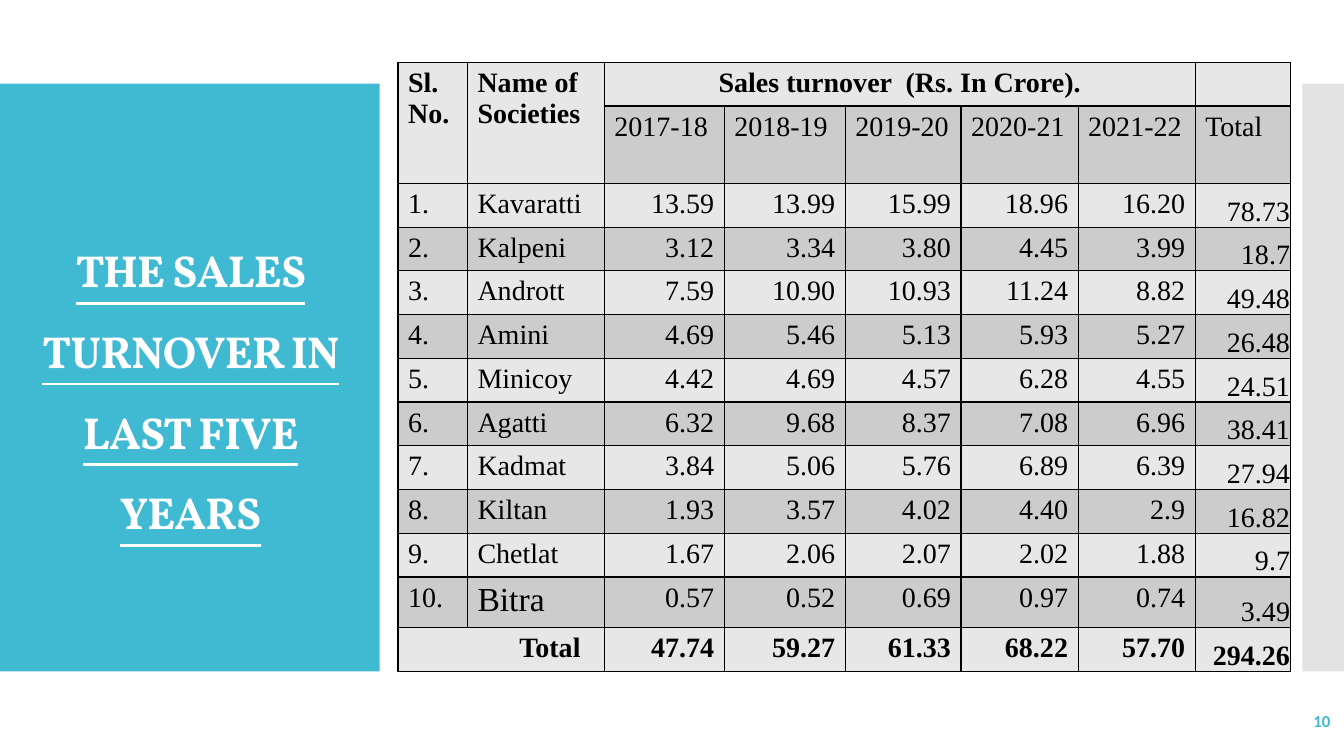
from dataclasses import dataclass

from lxml import etree
from pptx import Presentation
from pptx.dml.color import RGBColor
from pptx.enum.shapes import MSO_SHAPE
from pptx.enum.text import MSO_ANCHOR, MSO_AUTO_SIZE, PP_ALIGN
from pptx.oxml.ns import qn
from pptx.util import Cm, Pt

RECT = MSO_SHAPE.RECTANGLE
TOP, MIDDLE, BOTTOM = MSO_ANCHOR.TOP, MSO_ANCHOR.MIDDLE, MSO_ANCHOR.BOTTOM
LEFT, CENTER, RIGHT = PP_ALIGN.LEFT, PP_ALIGN.CENTER, PP_ALIGN.RIGHT
FIXED = MSO_AUTO_SIZE.NONE

TITLE = "THE SALES TURNOVER IN LAST FIVE YEARS"
PAGE = "10"
HEADS = [["Sl.", "No."], ["Name of Societies"], ["Sales turnover  (Rs. In Crore)."]]
YEARS = ["2017-18", "2018-19", "2019-20", "2020-21", "2021-22", "Total"]
SALES = [
    ("Kavaratti", "13.59", "13.99", "15.99", "18.96", "16.20", "78.73"),
    ("Kalpeni", "3.12", "3.34", "3.80", "4.45", "3.99", "18.7"),
    ("Andrott", "7.59", "10.90", "10.93", "11.24", "8.82", "49.48"),
    ("Amini", "4.69", "5.46", "5.13", "5.93", "5.27", "26.48"),
    ("Minicoy", "4.42", "4.69", "4.57", "6.28", "4.55", "24.51"),
    ("Agatti", "6.32", "9.68", "8.37", "7.08", "6.96", "38.41"),
    ("Kadmat", "3.84", "5.06", "5.76", "6.89", "6.39", "27.94"),
    ("Kiltan", "1.93", "3.57", "4.02", "4.40", "2.9", "16.82"),
    ("Chetlat", "1.67", "2.06", "2.07", "2.02", "1.88", "9.7"),
    ("Bitra", "0.57", "0.52", "0.69", "0.97", "0.74", "3.49"),
]
SUMS = ["47.74", "59.27", "61.33", "68.22", "57.70", "294.26"]
WIDTHS = [1.75, 3.45, 3.02, 3.05, 2.92, 2.95, 2.95, 2.41]
HEIGHTS = [1.09, 1.81] + [1.04] * 9 + [1.2, 1.04]


@dataclass(frozen=True)
class Theme:
    teal: str = "40BAD2"
    gray: str = "C8C8C8"
    white: str = "FFFFFF"
    black: str = "000000"
    bands: tuple = ("E7E7E7", "CCCCCC")
    title_font: str = "Vollkorn"
    table_font: str = "Times New Roman"
    page_font: str = "Calibri"
    title_size: int = 32
    table_size: int = 20
    large_size: int = 24
    page_size: int = 12


THEME = Theme()


def add_run(para, text, font, size, color, bold=False):
    run = para.add_run()
    run.text = text
    run.font.name = font
    run.font.size = Pt(size)
    run.font.bold = bold
    run.font.color.rgb = RGBColor.from_string(color)
    return run


def add_bar(slide, left, width, color):
    bar = slide.shapes.add_shape(RECT, Cm(left), Cm(2.11), Cm(width), Cm(14.81))
    bar.shadow.inherit = False
    bar.fill.solid()
    bar.fill.fore_color.rgb = RGBColor.from_string(color)
    bar.line.fill.background()
    slide.shapes.title.element.addprevious(bar.element)
    return bar


def add_title(slide):
    title = slide.shapes.title
    title.left, title.top = Cm(0.71), Cm(3.12)
    title.width, title.height = Cm(8.18), Cm(12.78)
    frame = title.text_frame
    frame.word_wrap = True
    frame.auto_size = FIXED
    frame.vertical_anchor = MIDDLE
    para = frame.paragraphs[0]
    para.alignment = CENTER
    para.line_spacing = 1.5
    run = add_run(para, TITLE, THEME.title_font, THEME.title_size, THEME.white, True)
    run.font.underline = True
    run.font._element.set("spc", "-60")


def add_page(slide):
    box = slide.shapes.add_textbox(Cm(29.54), Cm(17.65), Cm(4.24), Cm(1.02))
    frame = box.text_frame
    frame.word_wrap = True
    frame.vertical_anchor = MIDDLE
    para = frame.paragraphs[0]
    para.alignment = RIGHT
    add_run(para, PAGE, THEME.page_font, THEME.page_size, THEME.teal, True)


def style_cell(cell, band):
    props = cell._tc.get_or_add_tcPr()
    for side in ("a:lnL", "a:lnR", "a:lnT", "a:lnB"):
        line = etree.SubElement(props, qn(side), w=str(Pt(1)))
        fill = etree.SubElement(line, qn("a:solidFill"))
        etree.SubElement(fill, qn("a:srgbClr"), val=THEME.black)
    cell.fill.solid()
    cell.fill.fore_color.rgb = RGBColor.from_string(band)


def fill_cell(cell, lines, align=LEFT, bold=False, size=THEME.table_size):
    frame = cell.text_frame
    for i, text in enumerate(lines):
        para = frame.add_paragraph() if i else frame.paragraphs[0]
        para.alignment = align
        add_run(para, text, THEME.table_font, size, THEME.black, bold)


def fill_sums(table, row, values, bold=False):
    for col, value in enumerate(values, 2):
        cell = table.cell(row, col)
        fill_cell(cell, [value], RIGHT, bold)
    cell.vertical_anchor = BOTTOM
    cell.margin_left = cell.margin_right = cell.margin_top = Cm(0.02)
    cell.margin_bottom = Cm(0)


def add_sales(slide):
    frame = slide.shapes.add_table(
        len(HEIGHTS), len(WIDTHS), Cm(10.03), Cm(1.57),
        Cm(sum(WIDTHS)), Cm(sum(HEIGHTS)))
    table = frame.table
    for col, width in zip(table.columns, WIDTHS):
        col.width = Cm(width)
    for row, height in zip(table.rows, HEIGHTS):
        row.height = Cm(height)
    for i, row in enumerate(table.rows):
        for j, cell in enumerate(row.cells):
            style_cell(cell, THEME.bands[0 if i == 1 and j < 2 else i % 2])
            cell.vertical_anchor = TOP

    last = len(HEIGHTS) - 1
    for start, end in (((0, 0), (1, 0)), ((0, 1), (1, 1)),
                       ((0, 2), (0, 6)), ((last, 0), (last, 1))):
        table.cell(*start).merge(table.cell(*end))

    for col, lines in enumerate(HEADS):
        fill_cell(table.cell(0, col), lines, CENTER if col == 2 else LEFT, True)
    for col, year in enumerate(YEARS, 2):
        fill_cell(table.cell(1, col), [year])
    for row, (name, *values) in enumerate(SALES, 2):
        fill_cell(table.cell(row, 0), [f"{row - 1}."])
        size = THEME.large_size if name == "Bitra" else THEME.table_size
        fill_cell(table.cell(row, 1), [name], size=size)
        fill_sums(table, row, values)
    label = table.cell(last, 0)
    label.margin_right = Cm(0.6)
    fill_cell(label, ["Total"], RIGHT, True)
    fill_sums(table, last, SUMS, True)


def main():
    deck = Presentation()
    deck.slide_width, deck.slide_height = Cm(33.87), Cm(19.05)
    slide = deck.slides.add_slide(deck.slide_layouts[5])
    add_bar(slide, 0, 9.57, THEME.teal)
    side = add_bar(slide, 32.82, 1.05, THEME.gray)
    tint = side.element.spPr.find(qn("a:solidFill"))[0]
    etree.SubElement(tint, qn("a:alpha"), val="50000")
    add_title(slide)
    add_page(slide)
    add_sales(slide)
    deck.save("out.pptx")


if __name__ == "__main__":
    main()
